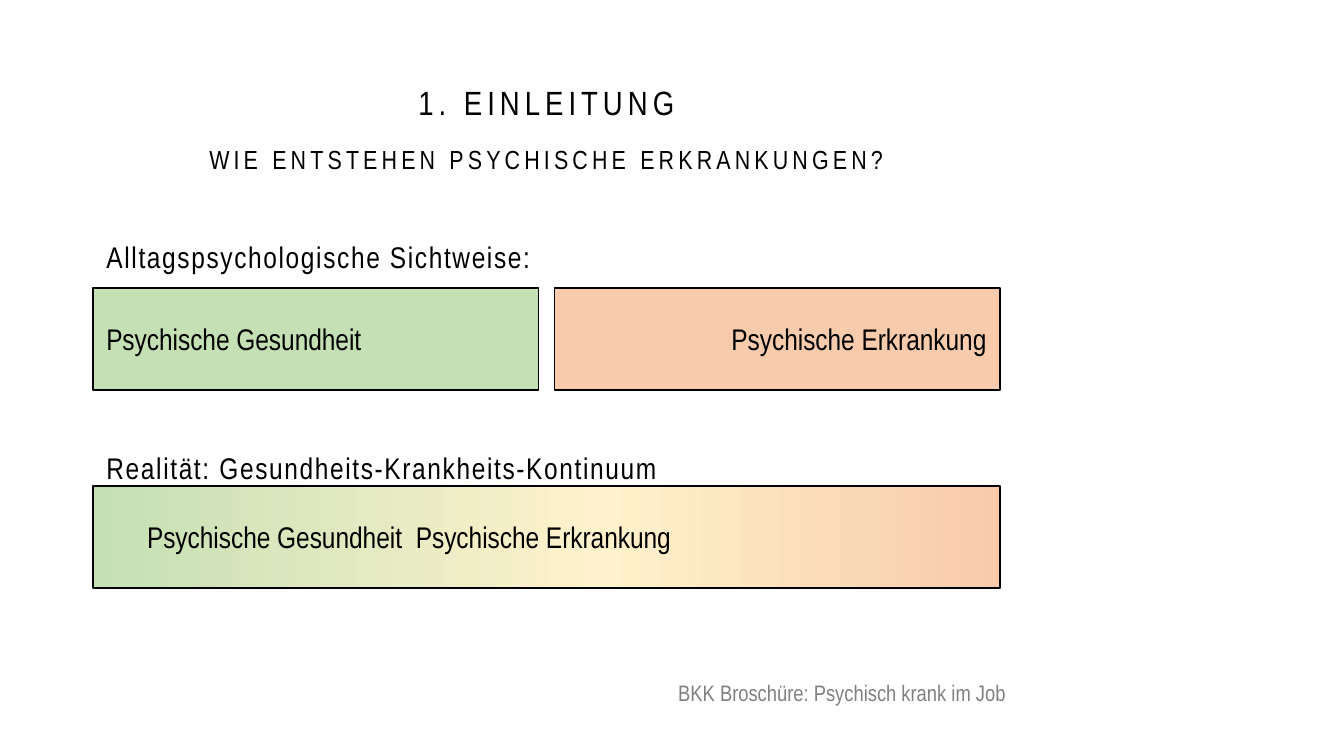
from copy import deepcopy

from lxml.etree import SubElement
from pptx import Presentation
from pptx.dml.color import RGBColor
from pptx.enum.shapes import MSO_SHAPE
from pptx.enum.text import MSO_ANCHOR, MSO_AUTO_SIZE, PP_ALIGN
from pptx.oxml.ns import qn
from pptx.util import Emu, Pt

SCALE = 914400 / 134.4
FONT = "Arial Narrow"
BLACK, GREY = "000000", "808080"
GREEN, YELLOW, ORANGE = "C5E0B4", "FFF2CC", "F8CBAD"
LEFT, WIDTH, BAR_HEIGHT, GAP = 93, 907, 102, 16
HEALTH, ILLNESS = "Psychische Gesundheit", "Psychische Erkrankung"


def px(length):
    return Emu(round(length * SCALE))


def color(code):
    return RGBColor.from_string(code)


def apply(target, values):
    for name, value in values.items():
        setattr(target, name, value)


def write(box, text, size, ink=BLACK, align=PP_ALIGN.LEFT, anchor=MSO_ANCHOR.TOP,
          line=None, tracking=0, tab=None):
    frame = box.text_frame
    apply(frame, {"word_wrap": True, "auto_size": MSO_AUTO_SIZE.NONE, "vertical_anchor": anchor})
    para = frame.paragraphs[0]
    settings = para._p.get_or_add_pPr()
    settings.set("marL", "0")
    settings.set("indent", "0")
    apply(para, {"alignment": align, "space_before": Pt(0), "line_spacing": line and Pt(line)})
    SubElement(settings, qn("a:buNone"))
    if tab:
        stops = SubElement(settings, qn("a:tabLst"))
        SubElement(stops, qn("a:tab"), pos=str(px(tab)), algn="l")
    span = para.add_run()
    span.text = text
    apply(span.font, {"name": FONT, "size": Pt(size), "bold": False})
    span.font.color.rgb = color(ink)
    if tracking:
        span._r.get_or_add_rPr().set("spc", str(round(tracking * 100)))


def fill_placeholder(box, top, height, text, size, **style):
    apply(box, {"left": px(LEFT), "top": px(top), "width": px(WIDTH), "height": px(height)})
    write(box, text, size, **style)


def add_bar(shapes, left, top, width):
    bar = shapes.add_shape(MSO_SHAPE.RECTANGLE, px(left), px(top), px(width), px(BAR_HEIGHT))
    bar.shadow.inherit = False
    bar.line.color.rgb = color(BLACK)
    bar.line.width = Pt(1)
    return bar


def add_opposites(page, top):
    width = (WIDTH - GAP) / 2
    group = page.shapes.add_group_shape()
    sides = [(HEALTH, GREEN, PP_ALIGN.LEFT), (ILLNESS, ORANGE, PP_ALIGN.RIGHT)]
    for index, (text, fill, align) in enumerate(sides):
        bar = add_bar(group.shapes, LEFT + index * (width + GAP), top, width)
        bar.fill.solid()
        bar.fill.fore_color.rgb = color(fill)
        write(bar, text, 16, align=align, anchor=MSO_ANCHOR.MIDDLE)


def add_continuum(page, top):
    bar = add_bar(page.shapes, LEFT, top, WIDTH)
    bar.fill.gradient()
    bar.fill.gradient_angle = 0
    stop_list = bar._element.spPr.find(qn("a:gradFill")).find(qn("a:gsLst"))
    stop_list.insert(1, deepcopy(stop_list[0]))
    colors = [(0, GREEN), (0.56, YELLOW), (1, ORANGE)]
    for stop, (position, code) in zip(bar.fill.gradient_stops, colors):
        stop.position = position
        stop.color.rgb = color(code)
    bar.text_frame.margin_left = px(54)
    write(bar, f"{HEALTH}\t{ILLNESS}", 16, anchor=MSO_ANCHOR.MIDDLE, tab=538)


def add_source(page):
    box = page.shapes.add_textbox(px(665), px(673), px(364), px(41))
    write(box, "BKK Broschüre: Psychisch krank im Job", 12, ink=GREY)


def main():
    deck = Presentation()
    apply(deck, {"slide_width": px(1344), "slide_height": px(756)})
    page = deck.slides.add_slide(deck.slide_layouts.get_by_name("Comparison"))
    title, first_label, subtitle, second_label, spare = page.placeholders
    spare._element.getparent().remove(spare._element)

    fill_placeholder(title, 77, 54, "1. EINLEITUNG", 18, align=PP_ALIGN.CENTER,
                     anchor=MSO_ANCHOR.MIDDLE, line=20, tracking=2.7)
    fill_placeholder(subtitle, 136, 50, "WIE ENTSTEHEN PSYCHISCHE ERKRANKUNGEN?", 14,
                     align=PP_ALIGN.CENTER, line=17.2, tracking=2.2)
    labels = [(first_label, 230, "Alltagspsychologische Sichtweise:"),
              (second_label, 441, "Realität: Gesundheits-Krankheits-Kontinuum")]
    for label, top, text in labels:
        fill_placeholder(label, top, 44, text, 16, line=20, tracking=0.9)

    add_opposites(page, 288)
    add_continuum(page, 486)
    add_source(page)
    deck.save("out.pptx")


if __name__ == "__main__":
    main()
